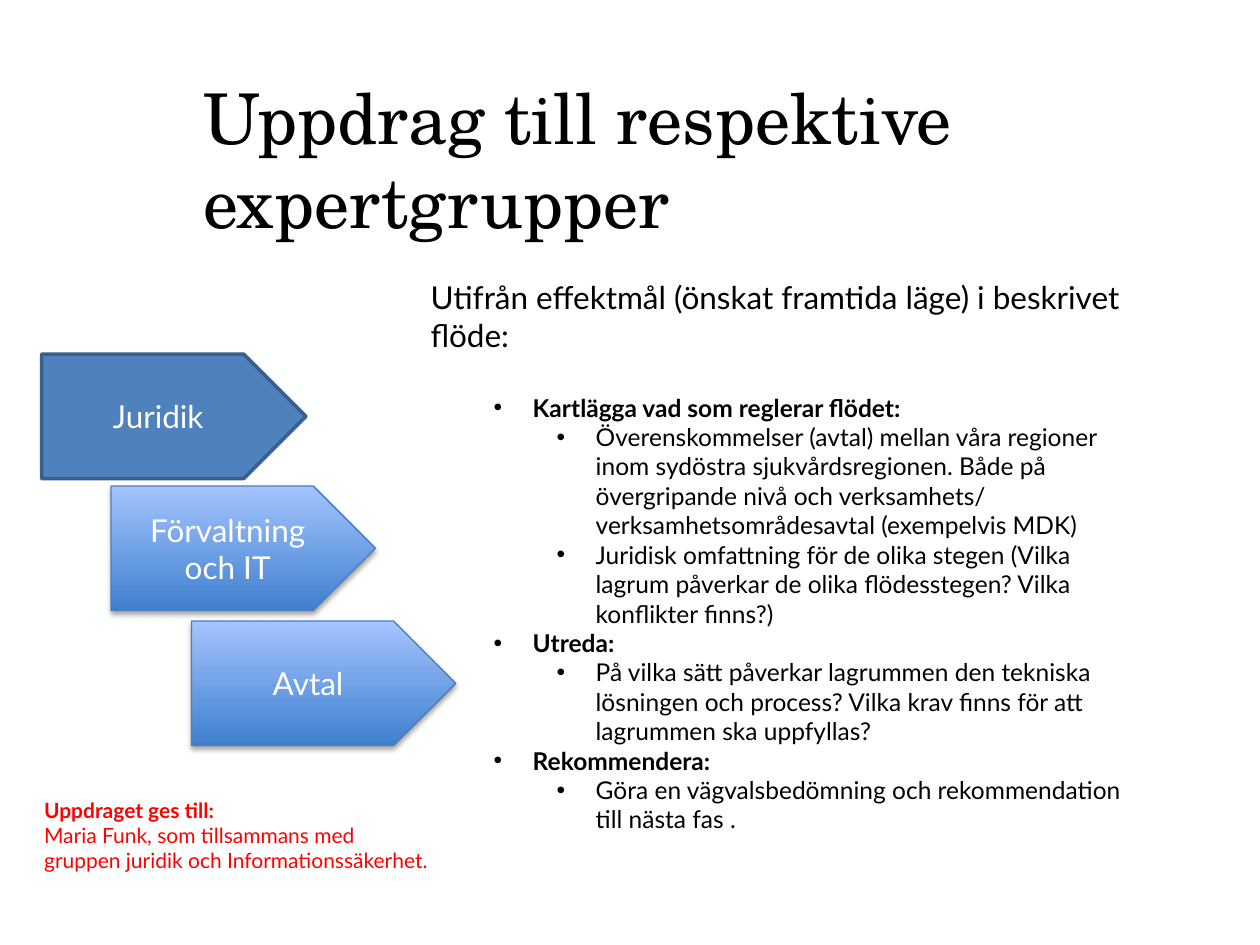
from dataclasses import dataclass

from lxml import etree
from pptx import Presentation
from pptx.dml.color import RGBColor
from pptx.enum.shapes import MSO_SHAPE
from pptx.enum.text import MSO_ANCHOR, MSO_AUTO_SIZE, PP_ALIGN
from pptx.oxml.ns import qn
from pptx.util import Cm, Pt

PENTAGON = MSO_SHAPE.PENTAGON
MIDDLE = MSO_ANCHOR.MIDDLE
TOP = MSO_ANCHOR.TOP
NO_FIT = MSO_AUTO_SIZE.NONE
LEFT, CENTER = PP_ALIGN.LEFT, PP_ALIGN.CENTER
TITLE_ONLY = 5


@dataclass(frozen=True)
class Theme:
    heading_font: str = "TeX Gyre Schola"
    body_font: str = "Lato"
    ink: str = "000000"
    light: str = "FFFFFF"
    alert: str = "FF0000"
    active: str = "4F81BD"
    active_line: str = "3A5F8C"
    fade_dark: str = "3F80CE"
    fade_light: str = "A4C4FF"
    fade_line: str = "4B7EBC"
    title_size: float = 40
    lead_size: float = 18
    task_size: float = 14
    note_size: float = 12


THEME = Theme()

GROUPS = [
    ("Juridik", 0, 0, True),
    ("Förvaltning och IT", 1.4, 2.66, False),
    ("Avtal", 3.02, 5.38, False),
]
LEAD = "Utifrån effektmål (önskat framtida läge) i beskrivet flöde:"
TASKS = [
    ("Kartlägga vad som reglerar flödet:", [
        "Överenskommelser (avtal) mellan våra regioner inom sydöstra "
        "sjukvårdsregionen. Både på övergripande nivå och verksamhets/\v"
        "verksamhetsområdesavtal (exempelvis MDK)",
        "Juridisk omfattning för de olika stegen (Vilka lagrum påverkar de "
        "olika flödesstegen? Vilka konflikter finns?)",
    ]),
    ("Utreda:", [
        "På vilka sätt påverkar lagrummen den tekniska lösningen och process? "
        "Vilka krav finns för att lagrummen ska uppfyllas?",
    ]),
    ("Rekommendera:", [
        "Göra en vägvalsbedömning och rekommendation till nästa fas .",
    ]),
]
NOTE_HEADING = "Uppdraget ges till:"
NOTE = "Maria Funk, som tillsammans med\vgruppen juridik och Informationssäkerhet."


def apply(target, values):
    for name, value in values.items():
        setattr(target, name, value)


def write(paragraph, text, size, color=THEME.ink, font=THEME.body_font,
          bold=False, align=LEFT):
    paragraph.text = text
    paragraph.alignment = align
    for run in paragraph.runs:
        apply(run.font, {"name": font, "size": Pt(size), "bold": bold})
        run.font.color.rgb = RGBColor.from_string(color)


def add_bullet(paragraph, level):
    paragraph.level = level
    properties = paragraph._p.get_or_add_pPr()
    properties.set("marL", str(Cm(0.79 + 1.27 * level)))
    properties.set("indent", str(-Cm(0.79)))
    etree.SubElement(properties, qn("a:buFont"), typeface="Arial")
    etree.SubElement(properties, qn("a:buChar"), char="•")


def add_shadow(shape):
    effects = shape._element.spPr.find(qn("a:effectLst"))
    shadow = etree.SubElement(
        effects, qn("a:outerShdw"), blurRad=str(Pt(3.1)), dist=str(Pt(1.8)),
        dir="5400000", rotWithShape="0")
    color = etree.SubElement(shadow, qn("a:srgbClr"), val=THEME.ink)
    etree.SubElement(color, qn("a:alpha"), val="35000")


def add_text_frame(slide, left, top, width, height):
    box = slide.shapes.add_textbox(Cm(left), Cm(top), Cm(width), Cm(height))
    apply(box.text_frame, {"word_wrap": True, "auto_size": NO_FIT,
                           "vertical_anchor": TOP})
    return box.text_frame


def place_title(slide, left, top, width, height):
    title = slide.shapes.title
    apply(title, {"left": Cm(left), "top": Cm(top),
                  "width": Cm(width), "height": Cm(height)})
    apply(title.text_frame, {"word_wrap": True, "auto_size": NO_FIT,
                             "vertical_anchor": MIDDLE})
    write(title.text_frame.paragraphs[0],
          "Uppdrag till respektive expertgrupper",
          THEME.title_size, font=THEME.heading_font)


def add_groups(slide, left, top, arrow_width, arrow_height):
    for group, across, down, active in GROUPS:
        arrow = slide.shapes.add_shape(
            PENTAGON, Cm(left + across), Cm(top + down),
            Cm(arrow_width), Cm(arrow_height))
        arrow.shadow.inherit = False
        if active:
            arrow.fill.solid()
            arrow.fill.fore_color.rgb = RGBColor.from_string(THEME.active)
        else:
            arrow.fill.gradient()
            arrow.fill.gradient_angle = 90
            shades = (THEME.fade_dark, THEME.fade_light)
            for position, (stop, shade) in enumerate(
                    zip(arrow.fill.gradient_stops, shades)):
                stop.position = position
                stop.color.rgb = RGBColor.from_string(shade)
            add_shadow(arrow)
        arrow.line.color.rgb = RGBColor.from_string(
            THEME.active_line if active else THEME.fade_line)
        arrow.line.width = Pt(2 if active else 0.75)
        apply(arrow.text_frame, {"word_wrap": True, "vertical_anchor": MIDDLE})
        write(arrow.text_frame.paragraphs[0], group, THEME.lead_size,
              THEME.light, align=CENTER)


def add_tasks(slide, left, top, width, height):
    frame = add_text_frame(slide, left, top, width, height)
    lead = frame.paragraphs[0]
    write(lead, LEAD, THEME.lead_size)
    lead.space_after = Pt(22)
    for task, details in TASKS:
        lines = [(task, 1)] + [(detail, 2) for detail in details]
        for text, level in lines:
            paragraph = frame.add_paragraph()
            add_bullet(paragraph, level)
            write(paragraph, text, THEME.task_size, bold=level == 1)


def add_assignment(slide, left, top, width, height):
    frame = add_text_frame(slide, left, top, width, height)
    write(frame.paragraphs[0], NOTE_HEADING, THEME.note_size, THEME.alert,
          bold=True)
    write(frame.add_paragraph(), NOTE, THEME.note_size, THEME.alert)


def main():
    deck = Presentation()
    apply(deck, {"slide_width": Cm(25.4), "slide_height": Cm(19.05)})
    slide = deck.slides.add_slide(deck.slide_layouts[TITLE_ONLY])
    place_title(slide, 3.84, 1.45, 19.71, 3.5)
    add_groups(slide, 0.84, 7.14, 5.33, 2.51)
    add_tasks(slide, 8.43, 5.49, 14.63, 13.77)
    add_assignment(slide, 0.64, 15.95, 11.61, 1.8)
    deck.save("out.pptx")


if __name__ == "__main__":
    main()
